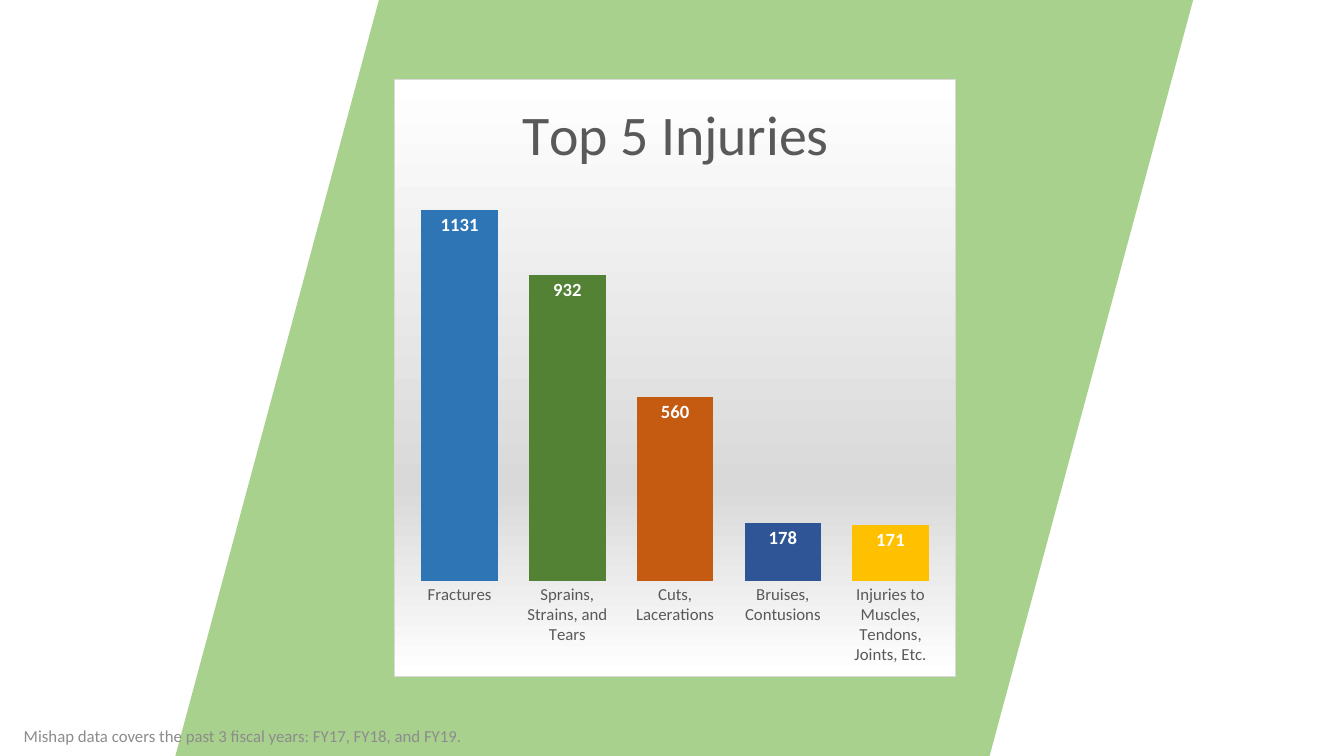
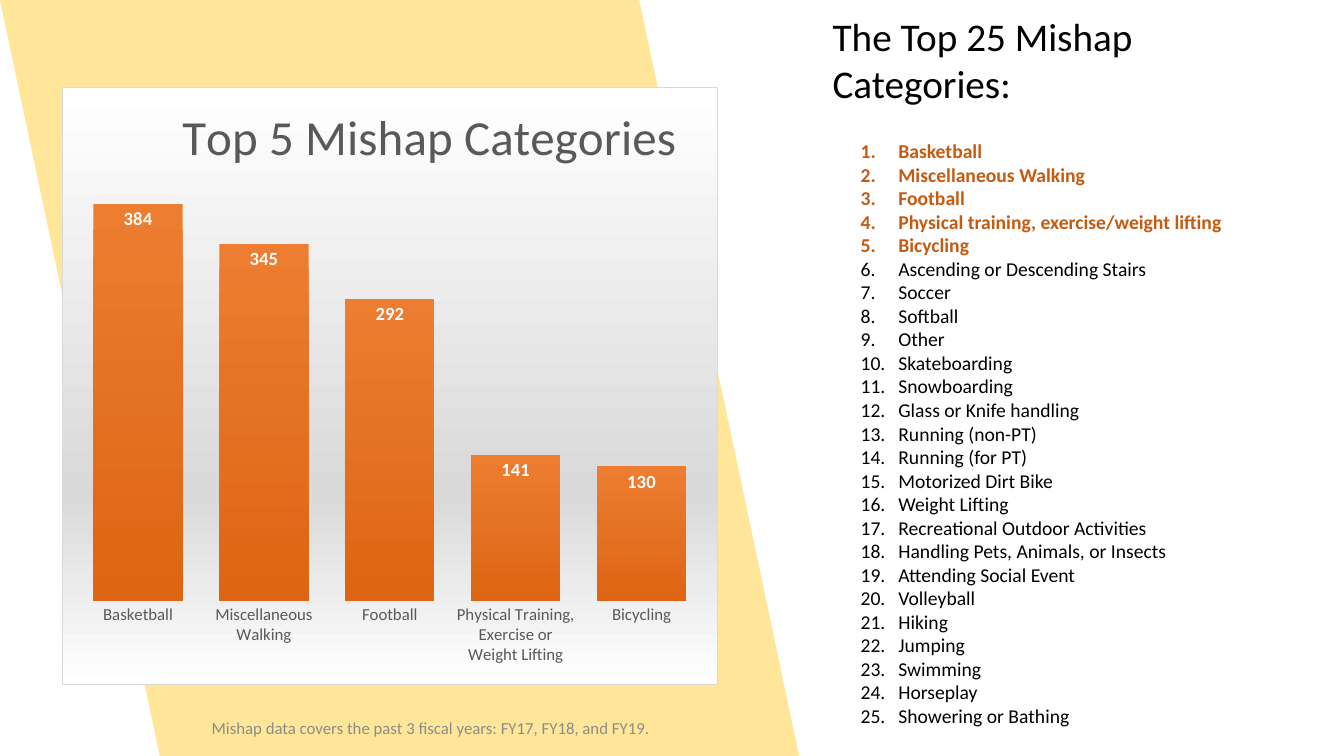
import pptx
import pptx.chart.data
import pptx.dml.color
import pptx.enum.chart
import pptx.enum.shapes
import pptx.enum.text
import pptx.oxml
import pptx.oxml.ns
import pptx.util

Cm = pptx.util.Cm
Pt = pptx.util.Pt

COLOURS = {
    "green band": "A9D18E", "yellow band": "FFE699",
    "black": "000000", "white": "FFFFFF", "grey": "595959",
    "note grey": "8C8C8C", "panel grey": "D9D9D9",
    "blue": "2E75B6", "green": "548235", "rust": "C55A11",
    "navy": "2F5597", "gold": "FFC000",
    "orange": "ED7D31", "deep orange": "DD6513",
}
FONT = "Calibri"
NOTE = "Mishap data covers the past 3 fiscal years: FY17, FY18, and FY19."
TOP_COUNT = 5
CATEGORIES = [
    "Basketball", "Miscellaneous Walking", "Football",
    "Physical training, exercise/weight lifting", "Bicycling",
    "Ascending or Descending Stairs", "Soccer", "Softball", "Other",
    "Skateboarding", "Snowboarding", "Glass or Knife handling",
    "Running (non-PT)", "Running (for PT)", "Motorized Dirt Bike",
    "Weight Lifting", "Recreational Outdoor Activities",
    "Handling Pets, Animals, or Insects", "Attending Social Event",
    "Volleyball", "Hiking", "Jumping", "Swimming", "Horseplay",
    "Showering or Bathing",
]


def rgb(name):
    return pptx.dml.color.RGBColor.from_string(COLOURS[name])


def assign(target, **values):
    for name, value in values.items():
        setattr(target, name, value)


def style(font, size, colour, bold=False):
    assign(font, name=FONT, size=Pt(size), bold=bold)
    font.color.rgb = rgb(colour)


def lengths(*values):
    return [Cm(value) for value in values]


def set_layout(parent, index, target=None, **fractions):
    """Give a chart part a manual layout in fractions of the chart."""
    for old in parent.xpath("c:layout"):
        parent.remove(old)
    inner = f'<c:layoutTarget val="{target}"/>' if target else ""
    modes = "".join(f'<c:{key}Mode val="edge"/>' for key in "xy")
    sizes = "".join(f'<c:{key} val="{value}"/>' for key, value in fractions.items())
    parent.insert(index, pptx.oxml.parse_xml(
        f'<c:layout {pptx.oxml.ns.nsdecls("c")}><c:manualLayout>'
        f"{inner}{modes}{sizes}</c:manualLayout></c:layout>"))


def set_panel(chart):
    """Fill the chart area with a white-grey-white gradient and a thin border."""
    stops = "".join(
        f'<a:gs pos="{share * 1000}"><a:srgbClr val="{COLOURS[name]}"/></a:gs>'
        for share, name in [(0, "white"), (68, "panel grey"), (100, "white")])
    panel = pptx.oxml.parse_xml(
        f'<c:spPr {pptx.oxml.ns.nsdecls("c", "a")}><a:gradFill><a:gsLst>{stops}</a:gsLst>'
        '<a:lin ang="5400000" scaled="0"/></a:gradFill>'
        f'<a:ln w="{Pt(0.75)}"><a:solidFill><a:srgbClr val="{COLOURS["panel grey"]}"/>'
        "</a:solidFill></a:ln></c:spPr>")
    chart.element.xpath("c:chart")[0].addnext(panel)


class MishapDeck:
    TITLE_ONLY, BLANK = 5, 6

    def __init__(self):
        self.deck = pptx.Presentation()
        assign(self.deck, slide_width=Cm(33.87), slide_height=Cm(19.05))
        self.page = None

    def add_page(self, layout):
        self.page = self.deck.slides.add_slide(self.deck.slide_layouts[layout])

    def title(self, text, place):
        box = self.page.shapes.title
        assign(box, **dict(zip(("left", "top", "width", "height"), lengths(*place))))
        assign(box.text_frame, text=text, word_wrap=True,
               auto_size=pptx.enum.text.MSO_AUTO_SIZE.NONE,
               vertical_anchor=pptx.enum.text.MSO_ANCHOR.TOP)
        para = box.text_frame.paragraphs[0]
        para.alignment = pptx.enum.text.PP_ALIGN.LEFT
        style(para.runs[0].font, 28, "black")

    def band(self, place, colour, flipped=False):
        band = self.page.shapes.add_shape(
            pptx.enum.shapes.MSO_SHAPE.FLOWCHART_DATA, *lengths(*place))
        band.shadow.inherit = False
        band.fill.solid()
        band.fill.fore_color.rgb = rgb(colour)
        band.line.fill.background()
        if flipped:
            band.element.spPr.xfrm.set("flipH", "1")

    def text_frame(self, place):
        frame = self.page.shapes.add_textbox(*lengths(*place)).text_frame
        frame.word_wrap = True
        return frame

    def note(self, place):
        frame = self.text_frame(place)
        frame.vertical_anchor = pptx.enum.text.MSO_ANCHOR.MIDDLE
        para = frame.paragraphs[0]
        para.alignment = pptx.enum.text.PP_ALIGN.CENTER
        span = para.add_run()
        span.text = NOTE
        style(span.font, 12, "note grey")

    def numbered_list(self, items, place, top_count):
        """Number the items, with the first top_count in bold colour."""
        frame = self.text_frame(place)
        for index, item in enumerate(items):
            para = frame.add_paragraph() if index else frame.paragraphs[0]
            span = para.add_run()
            span.text = item
            top = index < top_count
            style(span.font, 14, "rust" if top else "black", bold=top)
            marks = para._p.get_or_add_pPr()
            marks.set("marL", str(Cm(0.95)))
            marks.set("indent", str(-Cm(0.95)))
            marks.append(pptx.oxml.parse_xml(
                f'<a:buAutoNum {pptx.oxml.ns.nsdecls("a")} type="arabicPeriod"/>'))

    def column_chart(self, place, values, maximum, plot_area):
        """Add a column chart on a panel, and return it."""
        data = pptx.chart.data.CategoryChartData()
        data.categories = list(values)
        data.add_series("Series 1", list(values.values()))
        chart = self.page.shapes.add_chart(
            pptx.enum.chart.XL_CHART_TYPE.COLUMN_CLUSTERED, *lengths(*place), data).chart
        chart.has_legend = False
        style(chart.font, 10, "black")
        set_panel(chart)
        set_layout(chart.element.xpath("c:chart/c:plotArea")[0], 0, "inner", **plot_area)

        axis = chart.category_axis
        assign(axis, major_tick_mark=pptx.enum.chart.XL_TICK_MARK.NONE,
               has_major_gridlines=False)
        axis.format.line.fill.background()
        style(axis.tick_labels.font, 12, "grey")
        assign(chart.value_axis, minimum_scale=0, maximum_scale=maximum,
               has_major_gridlines=False, visible=False)

        plot = chart.plots[0]
        assign(plot, gap_width=41, vary_by_categories=False, has_data_labels=True)
        assign(plot.data_labels, show_value=True,
               position=pptx.enum.chart.XL_LABEL_POSITION.INSIDE_END)
        style(plot.data_labels.font, 13.3, "white", bold=True)
        return chart

    def chart_title(self, chart, text, size, **corner):
        chart.has_title = True
        span = chart.chart_title.text_frame.paragraphs[0].add_run()
        span.text = text
        style(span.font, size, "grey")
        chart.chart_title.include_in_layout = False
        set_layout(chart.element.xpath("c:chart/c:title")[0], 1, **corner)

    def colour_columns(self, chart, colours):
        """Give each column its own colour."""
        for index, colour in enumerate(colours):
            fill = chart.series[0].points[index].format.fill
            fill.solid()
            fill.fore_color.rgb = rgb(colour)

    def shade_columns(self, chart, top, bottom):
        """Shade all columns from the top colour down to the bottom colour."""
        fill = chart.series[0].format.fill
        fill.gradient()
        fill.gradient_angle = 270
        for stop, position, colour in zip(fill.gradient_stops, (0, 1), (top, bottom)):
            stop.position = position
            stop.color.rgb = rgb(colour)


def add_injuries(show):
    show.add_page(show.BLANK)
    show.band((4.42, 0, 25.65, 19.05), "green band")
    injuries = {
        "Fractures": 1131, "Sprains, Strains, and Tears": 932,
        "Cuts, Lacerations": 560, "Bruises, Contusions": 178,
        "Injuries to Muscles, Tendons, Joints, Etc.": 171,
    }
    chart = show.column_chart((9.93, 2, 14.17, 15.06), injuries, 1200,
                              dict(x=0.02, y=0.18, w=0.96, h=0.66))
    show.chart_title(chart, "Top 5 Injuries", 40, x=0.21, y=0.01)
    show.colour_columns(chart, ["blue", "green", "rust", "navy", "gold"])
    show.note((0, 18.03, 12.24, 1.02))


def add_categories(show):
    show.add_page(show.TITLE_ONLY)
    show.title("The Top 25 Mishap Categories:", (20.73, 0.18, 11.33, 2.64))
    show.band((0, 0, 20.14, 19.05), "yellow band", flipped=True)
    mishaps = {
        "Basketball": 384, "Miscellaneous Walking": 345, "Football": 292,
        "Physical Training, Exercise or Weight Lifting": 141, "Bicycling": 130,
    }
    chart = show.column_chart((1.55, 2.2, 16.55, 15.06), mishaps, 450,
                              dict(x=0.02, y=0.08, w=0.96, h=0.78))
    show.chart_title(chart, "Top 5 Mishap Categories", 35, x=0.17, y=0.01)
    show.shade_columns(chart, "orange", "deep orange")
    show.numbered_list(CATEGORIES, (21.44, 3.38, 12.14, 15.6), TOP_COUNT)
    show.note((4.62, 17.83, 12.47, 1.02))


def main():
    show = MishapDeck()
    add_injuries(show)
    add_categories(show)
    show.deck.save("out.pptx")


if __name__ == "__main__":
    main()
